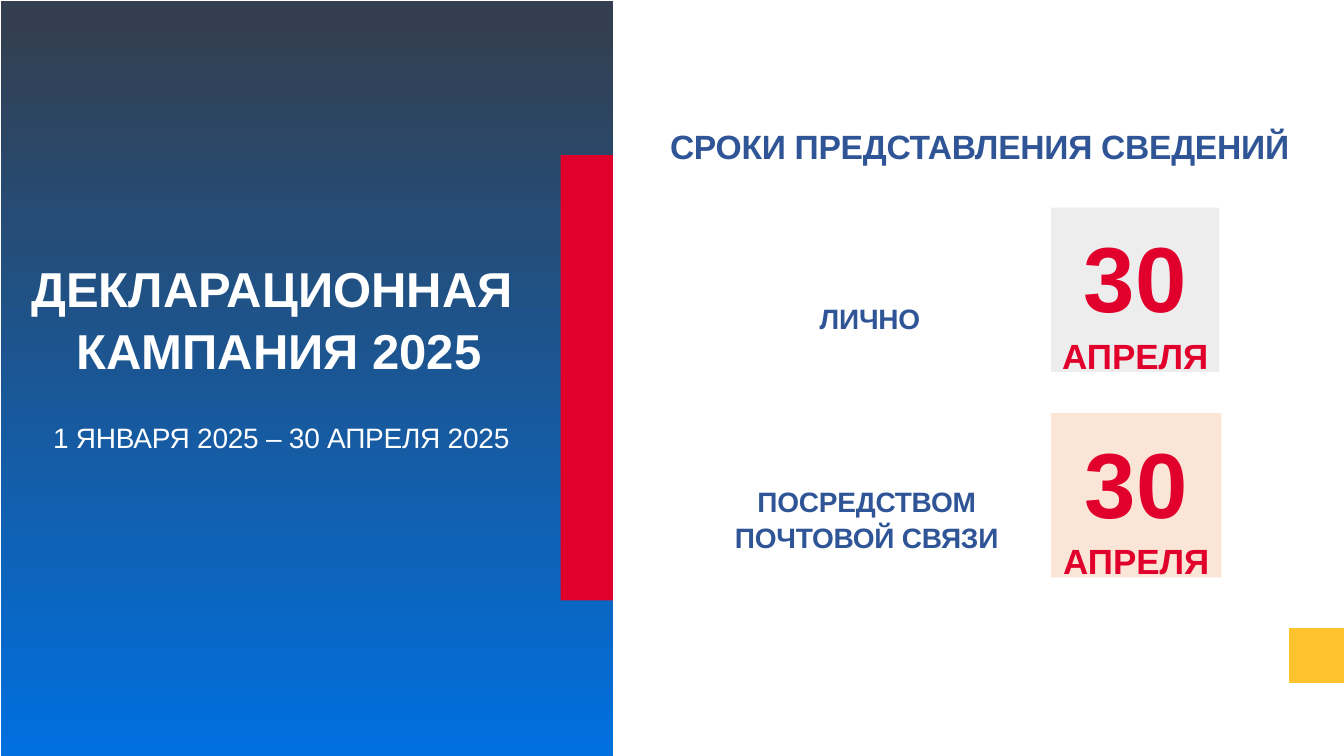
from dataclasses import dataclass

from pptx import Presentation
from pptx.dml.color import RGBColor
from pptx.enum.shapes import MSO_SHAPE
from pptx.enum.text import MSO_ANCHOR, MSO_AUTO_SIZE, PP_ALIGN
from pptx.util import Cm, Pt

RECTANGLE = MSO_SHAPE.RECTANGLE
TOP, MIDDLE = MSO_ANCHOR.TOP, MSO_ANCHOR.MIDDLE
CENTER = PP_ALIGN.CENTER
FIXED_SIZE = MSO_AUTO_SIZE.NONE
TITLE_ONLY = 5


@dataclass(frozen=True)
class Theme:
    font: str = "Arial"
    line_spacing: float = 1.07
    white: str = "FFFFFF"
    slate: str = "333F50"
    bright_blue: str = "0070DF"
    text_blue: str = "2F5597"
    red: str = "E1002B"
    yellow: str = "FFC32E"
    gray: str = "EDEDED"
    peach: str = "FBE5D6"
    title_size: int = 35
    heading_size: int = 24
    body_size: int = 20
    day_size: int = 66
    month_size: int = 25


theme = Theme()


def write_text(shape, lines, *, sizes, color, bold=True, anchor=TOP, spacing=0, side=0.25):
    """Write one centred paragraph per line, each with its own size."""
    frame = shape.text_frame
    frame.word_wrap = True
    frame.auto_size = FIXED_SIZE
    frame.vertical_anchor = anchor
    frame.margin_left = frame.margin_right = Cm(side)
    frame.margin_top = frame.margin_bottom = Cm(0.13)
    for index, (line, size) in enumerate(zip(lines, sizes)):
        paragraph = frame.paragraphs[0] if index == 0 else frame.add_paragraph()
        paragraph.alignment = CENTER
        paragraph.line_spacing = theme.line_spacing
        paragraph.space_before = Pt(0)
        run = paragraph.add_run()
        run.text = line
        run.font.name = theme.font
        run.font.size = Pt(size)
        run.font.bold = bold
        run.font.color.rgb = RGBColor.from_string(color)
        if spacing:
            run.font._element.set("spc", str(spacing))


def add_block(slide, left, top, width, height, color):
    """Add a plain rectangle without line or shadow."""
    shape = slide.shapes.add_shape(RECTANGLE, Cm(left), Cm(top), Cm(width), Cm(height))
    shape.shadow.inherit = False
    shape.line.fill.background()
    shape.fill.solid()
    shape.fill.fore_color.rgb = RGBColor.from_string(color)
    return shape


presentation = Presentation()
presentation.slide_width = Cm(33.87)
presentation.slide_height = Cm(19.05)
slide = presentation.slides.add_slide(presentation.slide_layouts[TITLE_ONLY])

# Gradient panel with its accents
panel = add_block(slide, 0.02, 0.02, 15.43, 19.03, theme.slate)
panel.fill.gradient()
panel.fill.gradient_angle = 270
for stop, position, color in zip(
    panel.fill.gradient_stops, (0.03, 1), (theme.slate, theme.bright_blue)
):
    stop.position = position
    stop.color.rgb = RGBColor.from_string(color)
add_block(slide, 14.13, 3.91, 1.32, 11.22, theme.red)
add_block(slide, 32.49, 15.83, 1.38, 1.38, theme.yellow)

# Title, brought in front of the panel
title = slide.shapes.title
title.left, title.top, title.width, title.height = Cm(0), Cm(6.32), Cm(14.07), Cm(3.33)
title.element.getparent().append(title.element)
write_text(
    title,
    ("ДЕКЛАРАЦИОННАЯ ", "КАМПАНИЯ 2025"),
    sizes=(theme.title_size,) * 2,
    color=theme.white,
    anchor=MIDDLE,
)

# Campaign dates, heading and the two ways of filing
labels = (
    (("1 ЯНВАРЯ 2025 – 30 АПРЕЛЯ 2025",), 0.05, 10.41, 14.07, 1.12,
     theme.body_size, theme.white, False),
    (("СРОКИ ПРЕДСТАВЛЕНИЯ СВЕДЕНИЙ",), 15.5, 2.97, 18.37, 1.27,
     theme.heading_size, theme.text_blue, True),
    (("ЛИЧНО",), 20.02, 7.42, 3.81, 1.12,
     theme.body_size, theme.text_blue, True),
    (("ПОСРЕДСТВОМ ", "ПОЧТОВОЙ СВЯЗИ "), 15.47, 12.01, 12.93, 1.96,
     theme.body_size, theme.text_blue, True),
)
for lines, left, top, width, height, size, color, bold in labels:
    label = slide.shapes.add_textbox(Cm(left), Cm(top), Cm(width), Cm(height))
    write_text(label, lines, sizes=(size,) * len(lines), color=color, bold=bold, spacing=-20)

# Deadline cards
for top, width, color in ((5.23, 4.24, theme.gray), (10.41, 4.29, theme.peach)):
    card = add_block(slide, 26.49, top, width, 4.14, color)
    write_text(
        card,
        ("30", "АПРЕЛЯ"),
        sizes=(theme.day_size, theme.month_size),
        color=theme.red,
        side=0,
    )

presentation.save("out.pptx")
